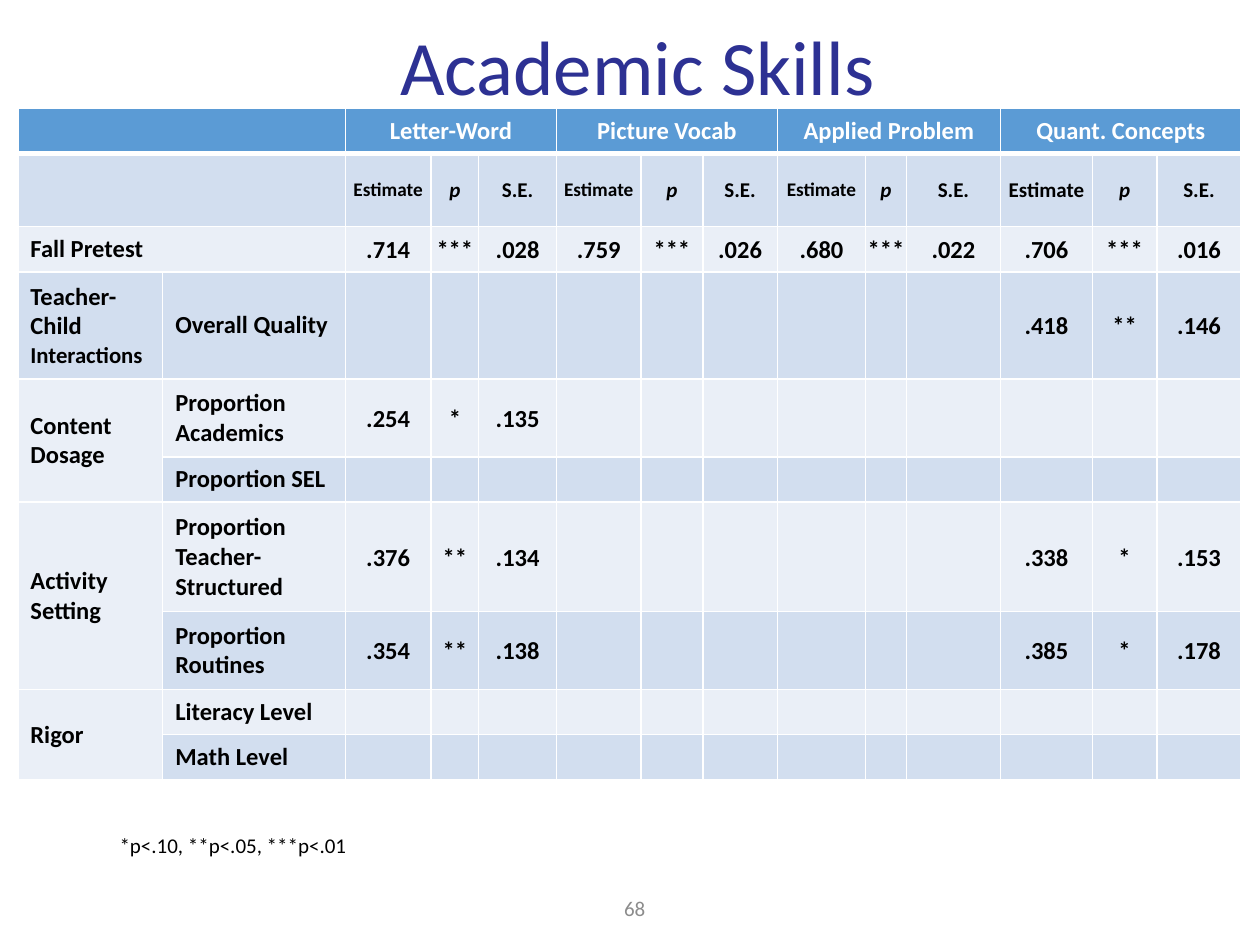
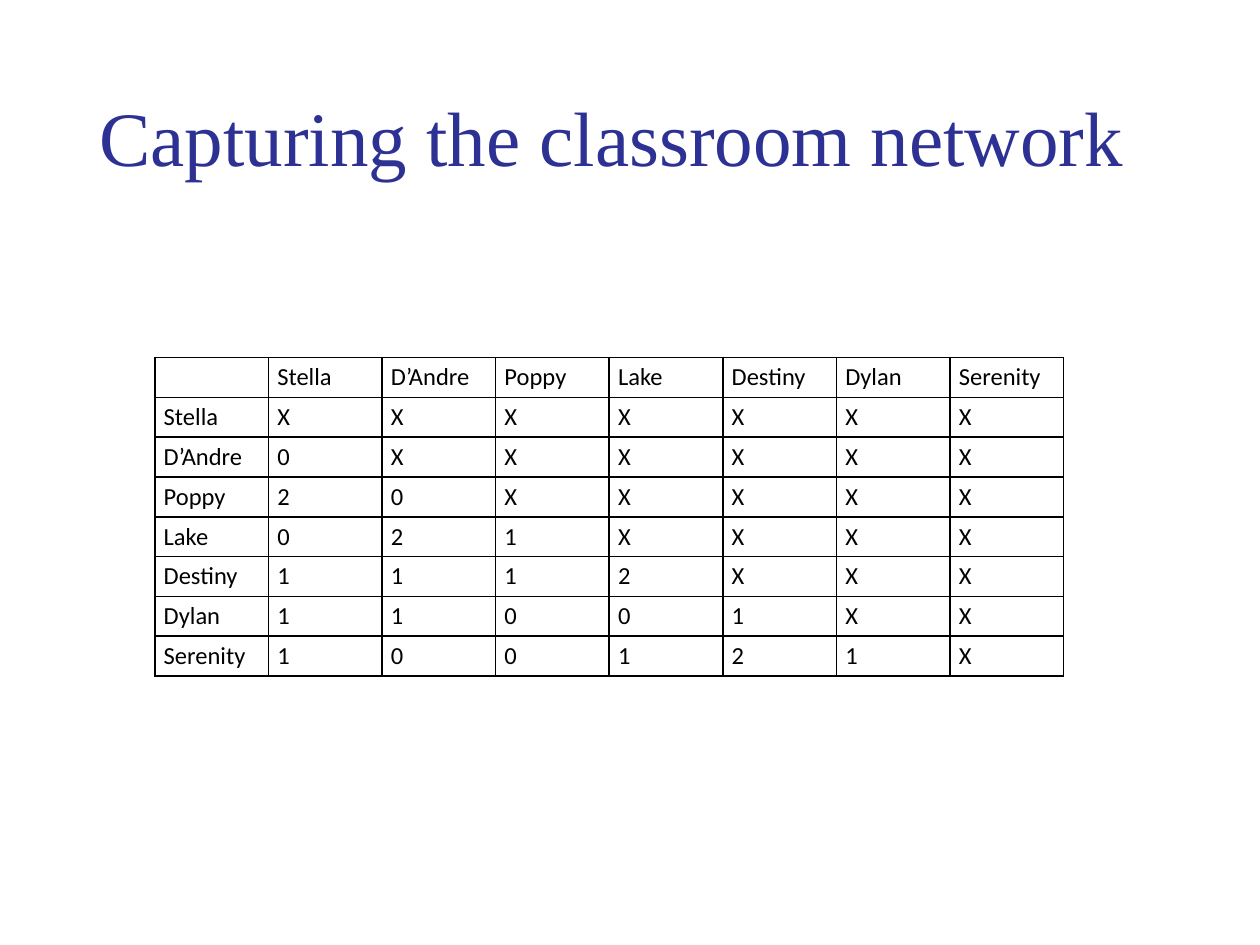
from lxml.etree import SubElement
from pptx import Presentation
from pptx.dml.color import RGBColor
from pptx.enum.text import MSO_ANCHOR, MSO_AUTO_SIZE, PP_ALIGN
from pptx.oxml.ns import qn
from pptx.util import Cm, Pt

TITLE_BLUE, HEADER_BLUE = "2D3193", "5B9BD5"
BAND_DARK, BAND_LIGHT = "D2DEEF", "EAEFF7"
BLACK, WHITE, GREY = "000000", "FFFFFF", "8C8C8C"
TITLE_ONLY = 5


def color(code):
    return RGBColor.from_string(code)


def write(para, text, size=14, font="Calibri", ink=BLACK, bold=False,
          italic=False, align=PP_ALIGN.LEFT):
    """Add one formatted span to a paragraph; empty text only sets its size."""
    para.alignment = align
    if not text:
        SubElement(para._p, qn("a:endParaRPr"), sz=str(size * 100))
        return
    span = para.add_run()
    span.text = text
    span.font.size, span.font.name = Pt(size), font
    span.font.bold, span.font.italic = bold, italic
    span.font.color.rgb = color(ink)


def set_border(cell, ink, bottom=1):
    """Outline a cell at 1 pt, with its own width for the bottom edge."""
    properties = cell._tc.get_or_add_tcPr()
    for edge, width in (("L", 1), ("R", 1), ("T", 1), ("B", bottom)):
        line = SubElement(properties, qn(f"a:ln{edge}"), w=str(Pt(width)))
        fill = SubElement(line, qn("a:solidFill"))
        SubElement(fill, qn("a:srgbClr"), val=ink)


class SlideBuilder:
    def __init__(self, deck):
        self.deck = deck
        self.page = None

    def new_page(self):
        self.page = self.deck.slides.add_slide(self.deck.slide_layouts[TITLE_ONLY])
        self.page.background.fill.solid()
        self.page.background.fill.fore_color.rgb = color(WHITE)

    def title(self, text, left, top, **style):
        box = self.page.shapes.title
        box.left, box.top, box.width, box.height = Cm(left), Cm(top), Cm(21.9), Cm(3.68)
        frame = box.text_frame
        frame.auto_size = MSO_AUTO_SIZE.NONE
        frame.vertical_anchor = MSO_ANCHOR.MIDDLE
        frame.paragraphs[0].line_spacing = 0.9
        write(frame.paragraphs[0], text, size=44, ink=TITLE_BLUE, **style)

    def text(self, text, left, top, width, height, anchor=MSO_ANCHOR.TOP, **style):
        box = self.page.shapes.add_textbox(Cm(left), Cm(top), Cm(width), Cm(height))
        box.text_frame.word_wrap = True
        box.text_frame.vertical_anchor = anchor
        write(box.text_frame.paragraphs[0], text, size=12, **style)

    def table(self, left, top, widths, heights):
        frame = self.page.shapes.add_table(
            len(heights), len(widths), Cm(left), Cm(top), Cm(sum(widths)), Cm(sum(heights)))
        table = frame.table
        table.first_row = table.horz_banding = False
        for column, width in zip(table.columns, widths):
            column.width = Cm(width)
        for row, height in zip(table.rows, heights):
            row.height = Cm(height)
        return table

    def cell(self, cell, text, fill, border, bottom=1, anchor=MSO_ANCHOR.MIDDLE,
             margins=None, **style):
        set_border(cell, border, bottom)
        cell.fill.solid()
        cell.fill.fore_color.rgb = color(fill)
        cell.vertical_anchor = anchor
        if margins:
            (cell.margin_left, cell.margin_top,
             cell.margin_right, cell.margin_bottom) = map(Cm, margins)
        write(cell.text_frame.paragraphs[0], text, **style)


# Estimates per predictor: category, predictor, then one entry per outcome
OUTCOMES = ["Letter-Word", "Picture Vocab", "Applied Problem", "Quant. Concepts"]
PREDICTORS = [
    ("Fall Pretest", "", ".714 *** .028", ".759 *** .026", ".680 *** .022", ".706 *** .016"),
    ("Teacher-Child ", "Overall Quality", "", "", "", ".418 ** .146"),
    ("Content Dosage", "Proportion Academics", ".254 * .135", "", "", ""),
    ("", "Proportion SEL", "", "", "", ""),
    ("Activity Setting", "Proportion Teacher-Structured", ".376 ** .134", "", "", ".338 * .153"),
    ("", "Proportion Routines", ".354 ** .138", "", "", ".385 * .178"),
    ("Rigor", "Literacy Level", "", "", "", ""),
    ("", "Math Level", "", "", "", ""),
]


def build_academic_skills(builder):
    builder.new_page()
    builder.title("Academic Skills ", 2.08, -0.41, align=PP_ALIGN.CENTER)
    builder.text("68", 7.54, 17.8, 5.72, 1.02, MSO_ANCHOR.MIDDLE,
                 ink=GREY, align=PP_ALIGN.RIGHT)
    builder.text("*p<.10, **p<.05, ***p<.01", 2.16, 16.66, 9.07, 0.77)

    widths = [2.92, 3.68, 1.73, 0.96, 1.57, 1.7, 1.25, 1.5, 1.78, 0.82, 1.9, 1.85, 1.3, 1.7]
    heights = [0.92, 1.47, 0.91, 2.16, 1.57, 0.91, 2.21, 1.57, 0.91, 0.91]
    table = builder.table(0.36, 2.18, widths, heights)
    centered = {"bold": True, "align": PP_ALIGN.CENTER}

    # Outcome names above their three statistics
    header = ["", ""]
    for outcome in OUTCOMES:
        header += [outcome, "", ""]
    for column, text in enumerate(header):
        builder.cell(table.cell(0, column), text, HEADER_BLUE, WHITE, bottom=3,
                     ink=WHITE, **centered)
    statistics = ["", ""] + ["Estimate", "p", "S.E."] * len(OUTCOMES)
    for column, text in enumerate(statistics):
        narrow = text == "Estimate" and column < 11
        builder.cell(table.cell(1, column), text, BAND_DARK, WHITE,
                     margins=(0, 0, 0, 0) if text else None,
                     size=11 if narrow else 12, italic=text == "p", **centered)

    # Predictor rows in alternating bands
    for row, (category, predictor, *results) in enumerate(PREDICTORS, start=2):
        band = BAND_DARK if row % 2 else BAND_LIGHT
        for column, text in enumerate((category, predictor)):
            builder.cell(table.cell(row, column), text, band, WHITE, bold=True)
        for group, result in enumerate(results):
            for part, text in enumerate(result.split() or [""] * 3):
                builder.cell(table.cell(row, 2 + 3 * group + part), text, band, WHITE,
                             margins=(0.03, 0.03, 0.03, 0) if text else None, **centered)
    write(table.cell(3, 0).text_frame.paragraphs[0], "Interactions", size=13, bold=True)

    # Merged labels
    for row in range(3):
        table.cell(row, 0).merge(table.cell(row, 1))
    for column in range(2, len(widths), 3):
        table.cell(0, column).merge(table.cell(0, column + 2))
    for row in (4, 6, 8):
        table.cell(row, 0).merge(table.cell(row + 1, 0))


# Ties between each child and the children listed before them
CHILDREN = ["Stella", "D’Andre", "Poppy", "Lake", "Destiny", "Dylan", "Serenity"]
TIES = ["", "0", "20", "021", "1112", "11001", "100121"]


def build_classroom_network(builder):
    builder.new_page()
    builder.title("Capturing the classroom network", 1.75, 1.02, font="Times New Roman")
    size = len(CHILDREN) + 1
    table = builder.table(3.12, 7.21, [2.29] * size, [0.79] * size)
    rows = [["", *CHILDREN]]
    rows += [[child, *ties.ljust(len(CHILDREN), "X")] for child, ties in zip(CHILDREN, TIES)]
    for row, texts in enumerate(rows):
        for column, text in enumerate(texts):
            builder.cell(table.cell(row, column), text, WHITE, BLACK,
                         anchor=MSO_ANCHOR.TOP, margins=(0.18, 0.1, 0.18, 0.1))


def main():
    deck = Presentation()
    deck.slide_width, deck.slide_height = Cm(25.4), Cm(19.05)
    builder = SlideBuilder(deck)
    build_academic_skills(builder)
    build_classroom_network(builder)
    deck.save("out.pptx")


if __name__ == "__main__":
    main()
